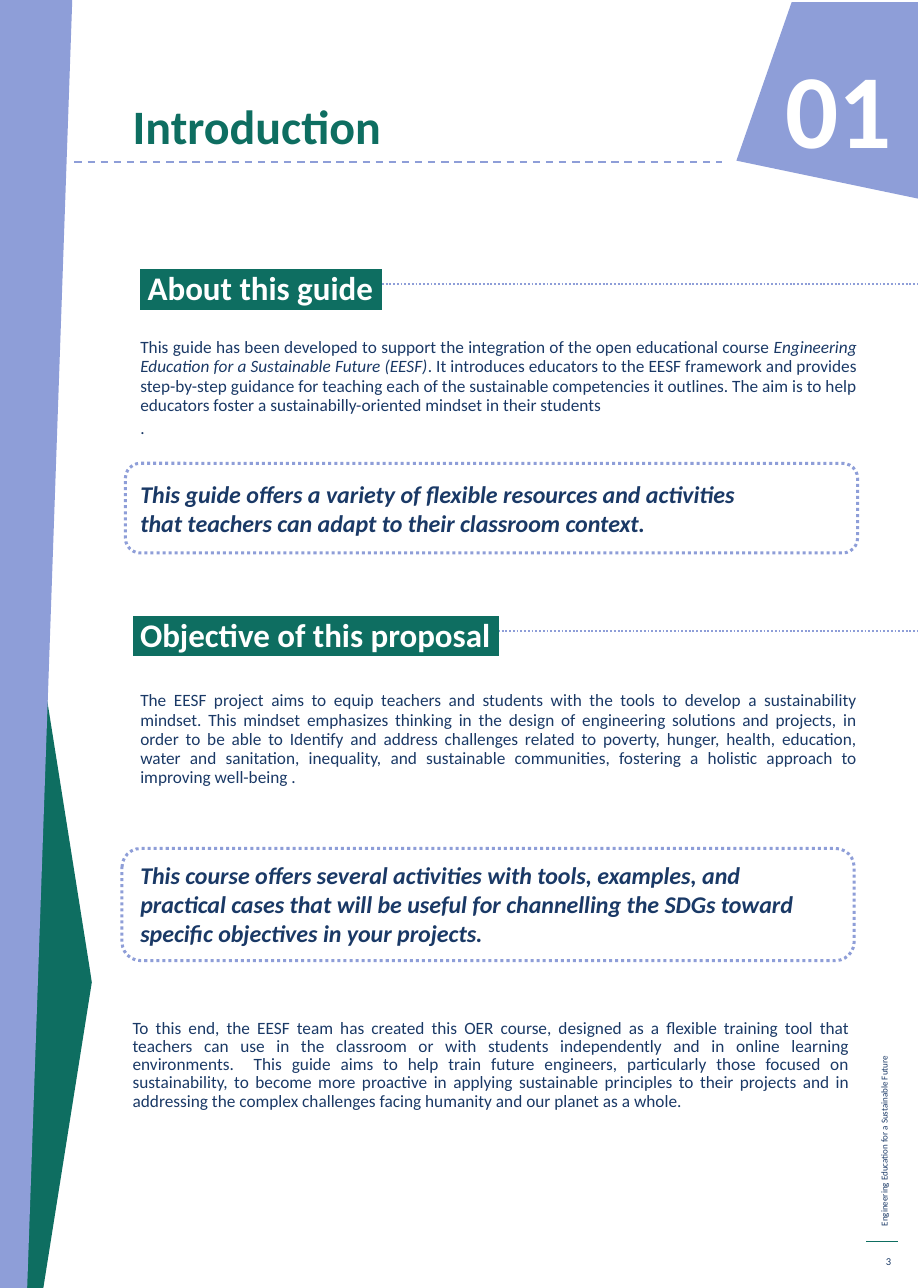
from lxml.etree import SubElement
from pptx import Presentation
from pptx.dml.color import RGBColor
from pptx.enum.dml import MSO_LINE
from pptx.enum.shapes import MSO_CONNECTOR, MSO_SHAPE
from pptx.enum.text import MSO_ANCHOR, MSO_AUTO_SIZE, PP_ALIGN
from pptx.oxml.ns import qn
from pptx.util import Cm, Pt

FONT = "Calibri"
NAVY, GREEN, LILAC, WHITE = "1A3966", "0E6E61", "8E9ED8", "FFFFFF"
PAGE_WIDTH, PAGE_HEIGHT = 21.59, 30.3
COLUMN_WIDTH, COLUMN_HEIGHT = 17.35, 5.26
BODY = {"size": 11.5, "align": PP_ALIGN.JUSTIFY}
QUOTE = {"size": 16, "bold": True, "italic": True}


def rgb(color):
    return RGBColor.from_string(color)


def write(frame, text, size, color=NAVY, bold=False, italic=False, align=PP_ALIGN.LEFT,
          spacing=1.0, before=0, highlight=None, same_line=False):
    """Add text as a new paragraph, or to the end of the last one."""
    paragraph = frame.paragraphs[-1]
    if not same_line:
        if paragraph.runs:
            paragraph = frame.add_paragraph()
        paragraph.alignment = align
        paragraph.line_spacing = spacing
        paragraph.space_before = Pt(before)
        properties = paragraph._p.get_or_add_pPr()
        properties.set("marL", "0")
        properties.set("indent", "0")
        SubElement(properties, qn("a:buNone"))
    run = paragraph.add_run()
    run.text = text
    font = run.font
    font.size, font.bold, font.italic = Pt(size), bold, italic
    font.color.rgb = rgb(color)
    if highlight:
        band = SubElement(run._r.get_or_add_rPr(), qn("a:highlight"))
        SubElement(band, qn("a:srgbClr"), val=highlight)
    font.name = FONT


def prepare(holder, anchor=MSO_ANCHOR.TOP):
    frame = holder.text_frame
    frame.word_wrap = True
    frame.auto_size = MSO_AUTO_SIZE.NONE
    frame.vertical_anchor = anchor
    frame.margin_left = frame.margin_right = Cm(0.25)
    frame.margin_top = frame.margin_bottom = Cm(0.13)
    return frame


def place(holder, left, top, width, height):
    holder.left, holder.top = Cm(left), Cm(top)
    holder.width, holder.height = Cm(width), Cm(height)


def add_text_area(slide, left, top, width, height, anchor=MSO_ANCHOR.TOP):
    area = slide.shapes.add_textbox(Cm(left), Cm(top), Cm(width), Cm(height))
    return prepare(area, anchor)


def add_polygon(slide, points, color):
    start, *others = [(Cm(x), Cm(y)) for x, y in points]
    builder = slide.shapes.build_freeform(*start, scale=1.0)
    builder.add_line_segments(others, close=True)
    polygon = builder.convert_to_shape()
    polygon.shadow.inherit = False
    polygon.fill.solid()
    polygon.fill.fore_color.rgb = rgb(color)
    polygon.line.fill.background()


def add_rule(slide, left, right, y, color=LILAC, width=1.25, dash=None):
    rule = slide.shapes.add_connector(MSO_CONNECTOR.STRAIGHT, Cm(left), Cm(y), Cm(right), Cm(y))
    rule.line.color.rgb = rgb(color)
    rule.line.width = Pt(width)
    if dash:
        rule.line.dash_style = dash
    SubElement(rule._element.spPr, qn("a:effectLst"))


def add_quote_frame(slide, left, top, height):
    border = slide.shapes.add_shape(MSO_SHAPE.ROUNDED_RECTANGLE,
                                    Cm(left), Cm(top), Cm(17.22), Cm(height))
    border.shadow.inherit = False
    border.fill.background()
    border.line.color.rgb = rgb(LILAC)
    border.line.width = Pt(2)
    border.line.dash_style = MSO_LINE.ROUND_DOT


def add_section_heading(slide, text, left, top):
    add_rule(slide, 6.43, PAGE_WIDTH, top + 0.51, dash=MSO_LINE.ROUND_DOT)
    heading = add_text_area(slide, left, top, 16.87, 1.65)
    label = {"size": 22, "bold": True, "highlight": GREEN}
    write(heading, " " + text, color=WHITE, **label)
    write(heading, ".", color=GREEN, same_line=True, **label)


def add_page_margin(slide):
    add_polygon(slide, [(1.02, PAGE_HEIGHT), (0.58, PAGE_HEIGHT), (0.58, 13.13),
                        (2.11, 22.78), (2.16, 23.11)], GREEN)
    add_polygon(slide, [(0, 0), (1.7, 0), (0.64, PAGE_HEIGHT), (0, PAGE_HEIGHT)], LILAC)
    side_title = slide.shapes.add_textbox(Cm(15.09), Cm(23.14), Cm(11.4), Cm(0.51))
    side_title.rotation = 270
    write(prepare(side_title), "Engineering Education for a Sustainable Future", size=6)
    add_rule(slide, 20.37, 21.13, 29.21, color=GREEN, width=0.75)
    page_number = add_text_area(slide, 20.37, 29.31, 0.84, 0.74, MSO_ANCHOR.MIDDLE)
    write(page_number, "3", size=7, align=PP_ALIGN.RIGHT)


def add_chapter_header(slide):
    title = slide.shapes.title
    place(title, 2.87, 2.67, 11.38, 1.96)
    title_frame = prepare(title, MSO_ANCHOR.BOTTOM)
    title_frame.margin_bottom = Cm(1.04)
    write(title_frame, "Introduction", size=32, color=GREEN, bold=True, spacing=0.74)
    add_rule(slide, 1.75, 16.97, 3.81, dash=MSO_LINE.DASH)
    add_polygon(slide, [(21.77, 0.05), (18.62, 0.05), (17.32, 3.78), (21.72, 4.7)], LILAC)
    chapter = add_text_area(slide, 16.66, 0.89, 4.57, 3.61)
    write(chapter, "01", size=70, color=WHITE, bold=True, align=PP_ALIGN.RIGHT)


def add_about(slide):
    add_section_heading(slide, "About this guide", 3.05, 6.17)
    add_quote_frame(slide, 2.95, 10.9, 2.11)
    body = slide.placeholders[1]
    place(body, 3.05, 7.82, COLUMN_WIDTH, COLUMN_HEIGHT)
    about = prepare(body)
    write(about, "This guide has been developed to support the integration of the open "
          "educational course ", spacing=Pt(12.8), **BODY)
    write(about, "Engineering Education for a Sustainable Future (EESF)",
          italic=True, same_line=True, **BODY)
    write(about, ". It introduces educators to the EESF framework and provides step-by-step "
          "guidance for teaching each of the sustainable competencies it outlines. The aim is "
          "to help educators foster a sustainabilly-oriented mindset in their students",
          same_line=True, **BODY)
    write(about, ".", spacing=1.11, **BODY)
    write(about, "This guide offers a variety of flexible resources and activities",
          before=28.1, **QUOTE)
    write(about, "that teachers can adapt to their classroom context.", **QUOTE)


def add_objective(slide):
    add_section_heading(slide, "Objective of this proposal", 2.87, 14.33)
    add_quote_frame(slide, 2.87, 19.96, 2.64)
    objective = add_text_area(slide, 3.05, 16.13, COLUMN_WIDTH, COLUMN_HEIGHT)
    write(objective, "The EESF project aims to equip teachers and students with the tools to "
          "develop a sustainability mindset. This mindset emphasizes thinking in the design of "
          "engineering solutions and projects, in order to be able to Identify and address "
          "challenges related to poverty, hunger, health, education, water and sanitation, "
          "inequality, and sustainable communities, fostering a holistic approach to improving "
          "well-being .", spacing=Pt(12.8), **BODY)
    write(objective, "This course offers several activities with tools, examples, and",
          before=49.1, **QUOTE)
    write(objective, "practical cases that will be useful for channelling the SDGs toward "
          "specific objectives in your projects.", **QUOTE)


def add_closing(slide):
    closing = add_text_area(slide, 2.87, 23.85, COLUMN_WIDTH, COLUMN_HEIGHT)
    write(closing, "To this end, the EESF team has created this OER course, designed as a "
          "flexible training tool that teachers can use in the classroom or with students "
          "independently and in online learning environments.  This guide aims to help train "
          "future engineers, particularly those focused on sustainability, to become more "
          "proactive in applying sustainable principles to their projects and in addressing "
          "the complex challenges facing humanity and our planet as a whole.",
          spacing=Pt(12.2), **BODY)


def main():
    guide = Presentation()
    guide.slide_width, guide.slide_height = Cm(PAGE_WIDTH), Cm(PAGE_HEIGHT)
    slide = guide.slides.add_slide(guide.slide_layouts[1])
    # Page frame
    add_page_margin(slide)
    add_chapter_header(slide)
    # Sections
    add_about(slide)
    add_objective(slide)
    add_closing(slide)
    guide.save("out.pptx")


if __name__ == "__main__":
    main()
